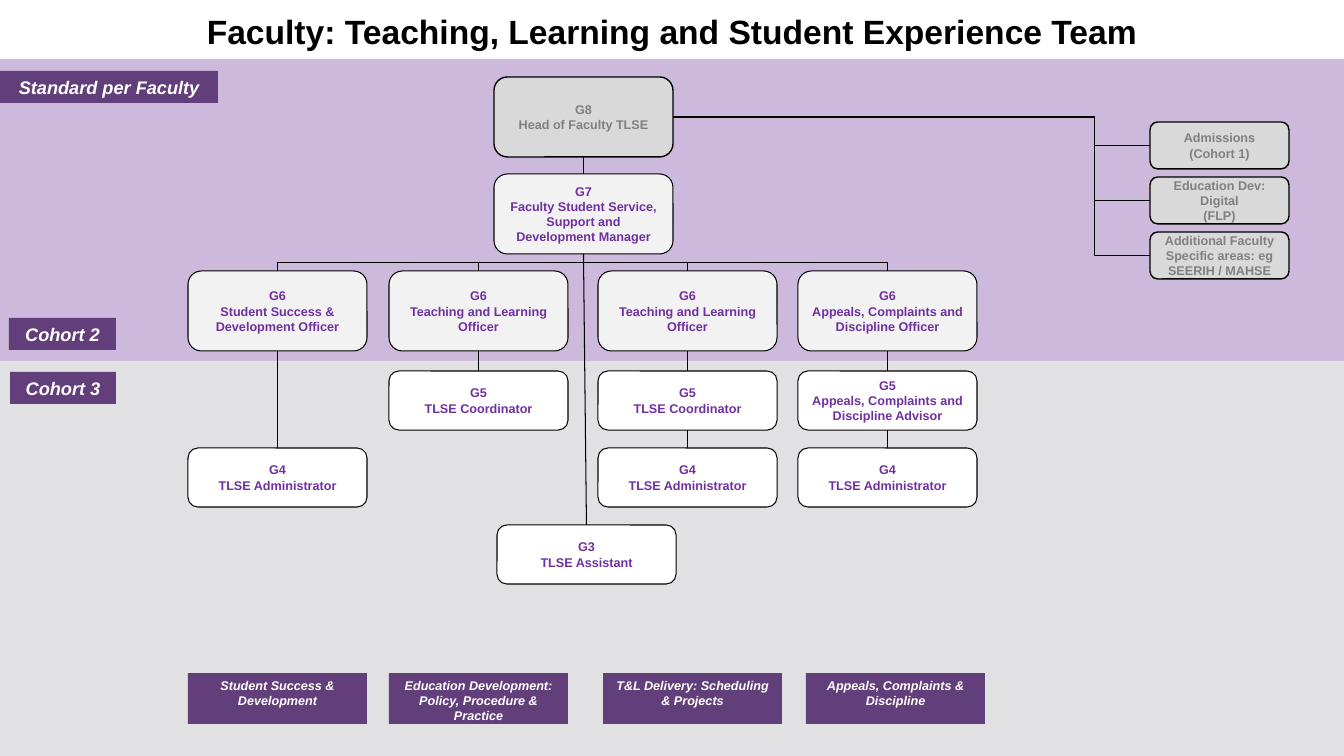
from lxml.etree import SubElement
from pptx import Presentation
from pptx.dml.color import RGBColor
from pptx.enum.shapes import MSO_CONNECTOR, MSO_SHAPE
from pptx.enum.text import MSO_ANCHOR, PP_ALIGN
from pptx.oxml.ns import qn
from pptx.util import Pt

PX = 914400 / 100.8
BLACK = RGBColor(0x00, 0x00, 0x00)
WHITE = RGBColor(0xFF, 0xFF, 0xFF)
LILAC = RGBColor(0xCD, 0xB9, 0xDB)
SMOKE = RGBColor(0xE1, 0xE0, 0xE2)
PLUM = RGBColor(0x62, 0x3E, 0x7A)
PURPLE = RGBColor(0x70, 0x30, 0xA0)
PALE = RGBColor(0xF2, 0xF2, 0xF2)
SILVER = RGBColor(0xD9, 0xD9, 0xD9)
GREY = RGBColor(0x80, 0x80, 0x80)

deck = Presentation()
deck.slide_width = round(1344 * PX)
deck.slide_height = round(756 * PX)
slide = deck.slides.add_slide(deck.slide_layouts[6])
shapes = slide.shapes


def box(text, x, y, w, h, kind=MSO_SHAPE.ROUNDED_RECTANGLE, fill=None,
        line=None, color=PURPLE, size=9, italic=False,
        anchor=MSO_ANCHOR.MIDDLE, space=None):
    shape = shapes.add_shape(kind, *[round(n * PX) for n in (x, y, w, h)])
    shape.shadow.inherit = False
    if fill is None:
        shape.fill.background()
    else:
        shape.fill.solid()
        shape.fill.fore_color.rgb = fill
    if line is None:
        shape.line.fill.background()
    else:
        shape.line.color.rgb = BLACK
        shape.line.width = Pt(line)
    frame = shape.text_frame
    frame.word_wrap = True
    frame.vertical_anchor = anchor
    frame.text = text
    for para in frame.paragraphs:
        para.alignment = PP_ALIGN.CENTER
        para.line_spacing = space
        for run in para.runs:
            font = run.font
            font.name = "Arial"
            font.size = Pt(size)
            font.bold = True
            font.italic = italic
            font.color.rgb = color
    return shape


def link(start, side, end, goal, kind=MSO_CONNECTOR.STRAIGHT, line=0.75):
    wire = shapes.add_connector(kind, 0, 0, 0, 0)
    wire.begin_connect(start, side)
    wire.end_connect(end, goal)
    wire.line.color.rgb = BLACK
    wire.line.width = Pt(line)
    SubElement(wire._element.spPr, qn("a:effectLst"))
    return wire


RECT = MSO_SHAPE.RECTANGLE
box("", 0, 59, 1344, 312, kind=RECT, fill=LILAC)
box("", 0, 361, 1344, 399, kind=RECT, fill=SMOKE)
box("Faculty: Teaching, Learning and Student Experience Team",
    0, 4, 1344, 60, kind=RECT, color=BLACK, size=24, space=0.9)

for text, x, y, w in [("Standard per Faculty", 0, 71, 218),
                      ("Cohort 2", 9, 318, 107),
                      ("Cohort 3", 10, 372, 106)]:
    box(text, x, y, w, 32, kind=RECT, fill=PLUM, color=WHITE, size=13,
        italic=True, anchor=MSO_ANCHOR.TOP)

WIDE = 179
head = box("G8\nHead of Faculty TLSE", 494, 77, WIDE, 80,
           fill=SILVER, line=1, color=GREY)
lead = box("G7\nFaculty Student Service, Support and Development Manager",
           494, 174, WIDE, 80, fill=PALE, line=0.75)
link(lead, 0, head, 2)

ADMIN = ("G4\nTLSE Administrator", 448)
COORD = ("G5\nTLSE Coordinator", 371)
ADVISOR = ("G5\nAppeals, Complaints and Discipline Advisor", 371)
teams = [
    (188, "Student Success & Development Officer", [ADMIN],
     188, "Student Success & Development"),
    (389, "Teaching and Learning Officer", [COORD],
     389, "Education Development: Policy, Procedure & Practice"),
    (598, "Teaching and Learning Officer", [COORD, ADMIN],
     603, "T&L Delivery: Scheduling & Projects"),
    (798, "Appeals, Complaints and Discipline Officer", [ADVISOR, ADMIN],
     806, "Appeals, Complaints & Discipline"),
]
for x, role, staff, base, area in teams:
    above = box("G6\n" + role, x, 271, WIDE, 80, fill=PALE, line=0.75)
    fork = link(lead, 2, above, 0, kind=MSO_CONNECTOR.ELBOW)
    wide, high = fork.width, fork.height
    fork.left += (wide - high) // 2
    fork.top += (high - wide) // 2
    fork.width, fork.height = high, wide
    right = above.left > lead.left
    frame = fork._element.spPr.find(qn("a:xfrm"))
    frame.set("rot", "16200000" if right else "5400000")
    frame.set("flipH", "1" if right else "0")
    for text, y in staff:
        below = box(text, x, y, WIDE, 59, fill=WHITE, line=0.75)
        link(above, 2, below, 0)
        above = below
    box(area, base, 673, WIDE, 51, kind=RECT, fill=PLUM, color=WHITE,
        italic=True, anchor=MSO_ANCHOR.TOP)

helper = box("G3\nTLSE Assistant", 497, 525, WIDE, 59, fill=WHITE, line=0.75)
link(lead, 2, helper, 0)

for row, text in enumerate(["Admissions\n(Cohort 1)",
                            "Education Dev: Digital\n(FLP)",
                            "Additional Faculty Specific areas: eg SEERIH / MAHSE"]):
    side = box(text, 1150, 122 + 55 * row, 139, 47,
               fill=SILVER, line=1, color=GREY)
    wire = link(head, 3, side, 1, kind=MSO_CONNECTOR.ELBOW, line=1)
    shape = wire._element.spPr.find(qn("a:prstGeom"))
    bends = shape.find(qn("a:avLst"))
    if bends is None:
        bends = SubElement(shape, qn("a:avLst"))
    SubElement(bends, qn("a:gd"), name="adj1", fmla="val 88400")

deck.save("out.pptx")
